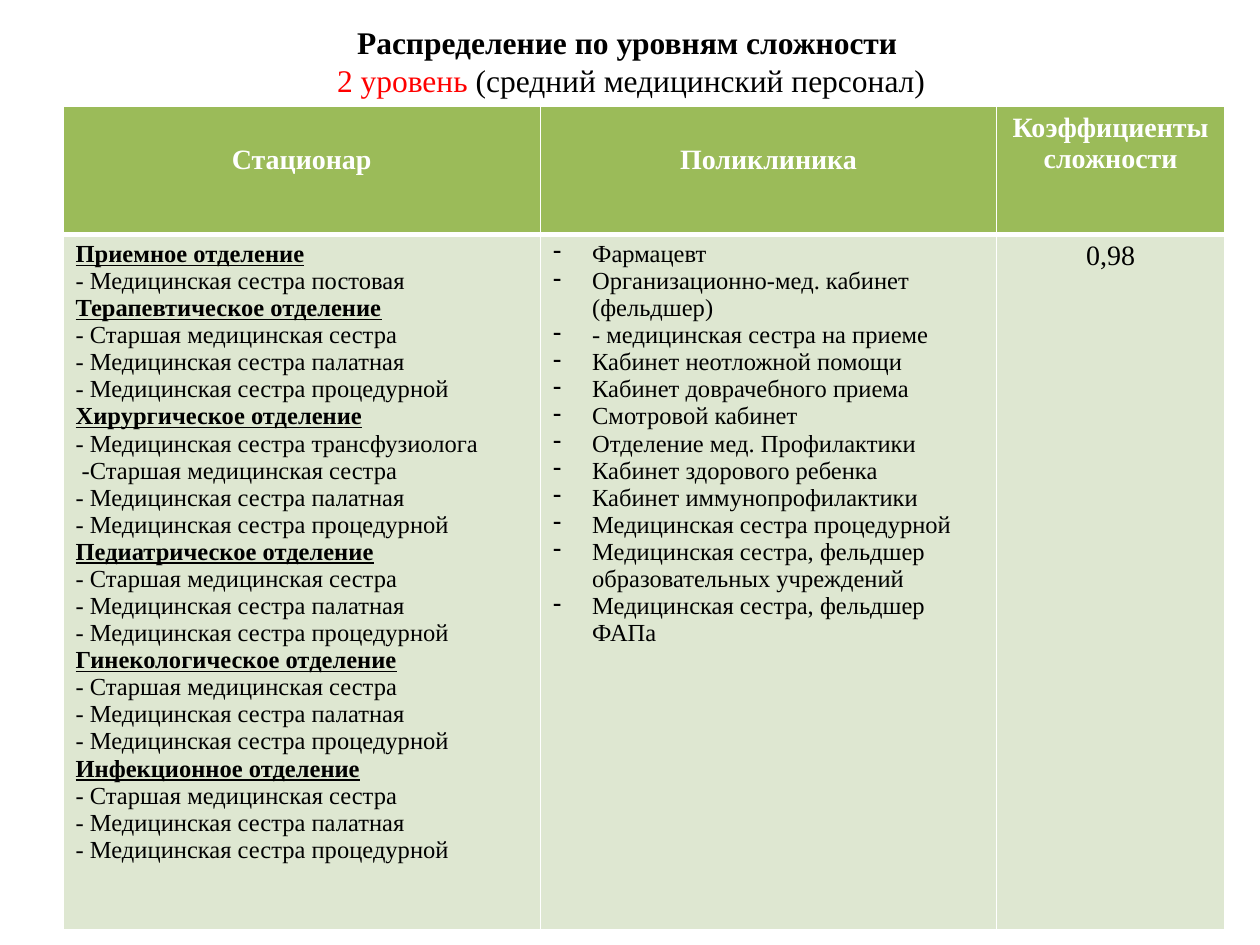
"""Builds a slide on second-level complexity of nursing staff."""
from dataclasses import dataclass

from lxml import etree
from pptx import Presentation
from pptx import util as u
from pptx.dml.color import RGBColor
from pptx.enum import text
from pptx.oxml import ns


@dataclass(frozen=True)
class Theme:
    font: str = "Times New Roman"
    black: str = "000000"
    white: str = "FFFFFF"
    red: str = "FF0000"
    head: str = "9BBB59"
    body: str = "DEE7D1"
    title: int = 18
    large: int = 16
    small: int = 14


T = Theme()
MID = text.PP_ALIGN.CENTER
SENIOR = "Старшая медицинская сестра"
WARD = "- Медицинская сестра палатная"
TREAT = "- Медицинская сестра процедурной"
TEAM = ["- " + SENIOR, WARD, TREAT]
UNITS = {
    "Приемное отделение": ["- Медицинская сестра постовая"],
    "Терапевтическое отделение": TEAM,
    "Хирургическое отделение": [
        "- Медицинская сестра трансфузиолога", " -" + SENIOR, WARD, TREAT],
    "Педиатрическое отделение": TEAM,
    "Гинекологическое отделение": TEAM,
    "Инфекционное отделение": TEAM,
}
CLINIC = [
    "Фармацевт",
    "Организационно-мед. кабинет (фельдшер)",
    "- медицинская сестра на приеме",
    "Кабинет неотложной помощи",
    "Кабинет доврачебного приема",
    "Смотровой кабинет",
    "Отделение мед. Профилактики",
    "Кабинет здорового ребенка",
    "Кабинет иммунопрофилактики",
    "Медицинская сестра процедурной",
    "Медицинская сестра, фельдшер образовательных учреждений",
    "Медицинская сестра, фельдшер ФАПа",
]
HEADS = ["Стационар", "Поликлиника", "Коэффициенты сложности"]


def style(font, size, color=T.black, bold=False, under=False):
    """Set the look of a font."""
    font.name, font.size = T.font, u.Pt(size)
    font.bold, font.underline = bold, under
    font.color.rgb = RGBColor.from_string(color)


def add_title(slide):
    """Place and fill the two-line title."""
    title = slide.shapes.title
    title.left, title.top = u.Inches(0.51), u.Inches(0.13)
    title.width, title.height = u.Inches(9), u.Inches(0.71)
    frame = title.text_frame
    frame.auto_size = text.MSO_AUTO_SIZE.NONE
    frame.vertical_anchor = text.MSO_ANCHOR.MIDDLE
    para = frame.paragraphs[0]
    para.alignment = MID
    style(para.font, T.title)
    parts = [("Распределение по уровням сложности ", T.black, True),
             ("2 уровень ", T.red, False),
             ("(средний медицинский персонал)", T.black, False)]
    for i, (words, color, bold) in enumerate(parts):
        if i == 1:
            para.add_line_break()
        run = para.add_run()
        run.text = words
        style(run.font, T.title, color, bold)


def add_lines(cell, lines, size, color=T.black, align=None, dash=False):
    """Write (words, is heading) lines into a cell, one paragraph each."""
    frame = cell.text_frame
    for i, (words, head) in enumerate(lines):
        para = frame.add_paragraph() if i else frame.paragraphs[0]
        para.text = words
        if align is not None:
            para.alignment = align
        if dash:
            add_dash(para)
        style(para.font, size, color, head, head and color == T.black)


def add_dash(para):
    """Give a paragraph a hanging dash bullet."""
    props = para._p.get_or_add_pPr()
    indent = u.Inches(0.31)
    props.set("marL", str(indent))
    props.set("indent", str(-indent))
    etree.SubElement(props, ns.qn("a:buChar"), char="-")


def set_cell(cell, color, edges):
    """Fill a cell and draw its white borders."""
    props = cell._tc.get_or_add_tcPr()
    for side, width in edges.items():
        line = etree.SubElement(props, ns.qn("a:ln" + side), w=str(u.Pt(width)))
        fill = etree.SubElement(line, ns.qn("a:solidFill"))
        etree.SubElement(fill, ns.qn("a:srgbClr"), val=T.white)
    cell.fill.solid()
    cell.fill.fore_color.rgb = RGBColor.from_string(color)


def add_grid(slide):
    """Add the table of posts and factors."""
    grid = slide.shapes.add_table(
        2, 3, u.Inches(0.5), u.Inches(0.84), u.Inches(9.22), u.Inches(6.54)).table
    for col, width in zip(grid.columns, (3.79, 3.62, 1.81)):
        col.width = u.Inches(width)
    for row, height in zip(grid.rows, (1.02, 5.52)):
        row.height = u.Inches(height)
    for i, words in enumerate(HEADS):
        head, body = grid.cell(0, i), grid.cell(1, i)
        set_cell(head, T.head, {"L": 1, "R": 1, "T": 1, "B": 3})
        set_cell(body, T.body, {"L": 1, "R": 1, "T": 3, "B": 1})
        add_lines(head, [(words, True)], T.large, T.white, MID)
        if i < 2:
            head.margin_top = u.Inches(0.31)
    staff = [(words, words == unit) for unit, posts in UNITS.items()
             for words in [unit, *posts]]
    add_lines(grid.cell(1, 0), staff, T.small)
    add_lines(grid.cell(1, 1), [(post, False) for post in CLINIC],
              T.small, dash=True)
    add_lines(grid.cell(1, 2), [("0,98", False)], T.large, align=MID)


def main():
    """Build and save the deck."""
    deck = Presentation()
    deck.slide_width, deck.slide_height = u.Inches(10), u.Inches(7.5)
    slide = deck.slides.add_slide(deck.slide_layouts[5])
    add_title(slide)
    add_grid(slide)
    deck.save("out.pptx")


if __name__ == "__main__":
    main()
